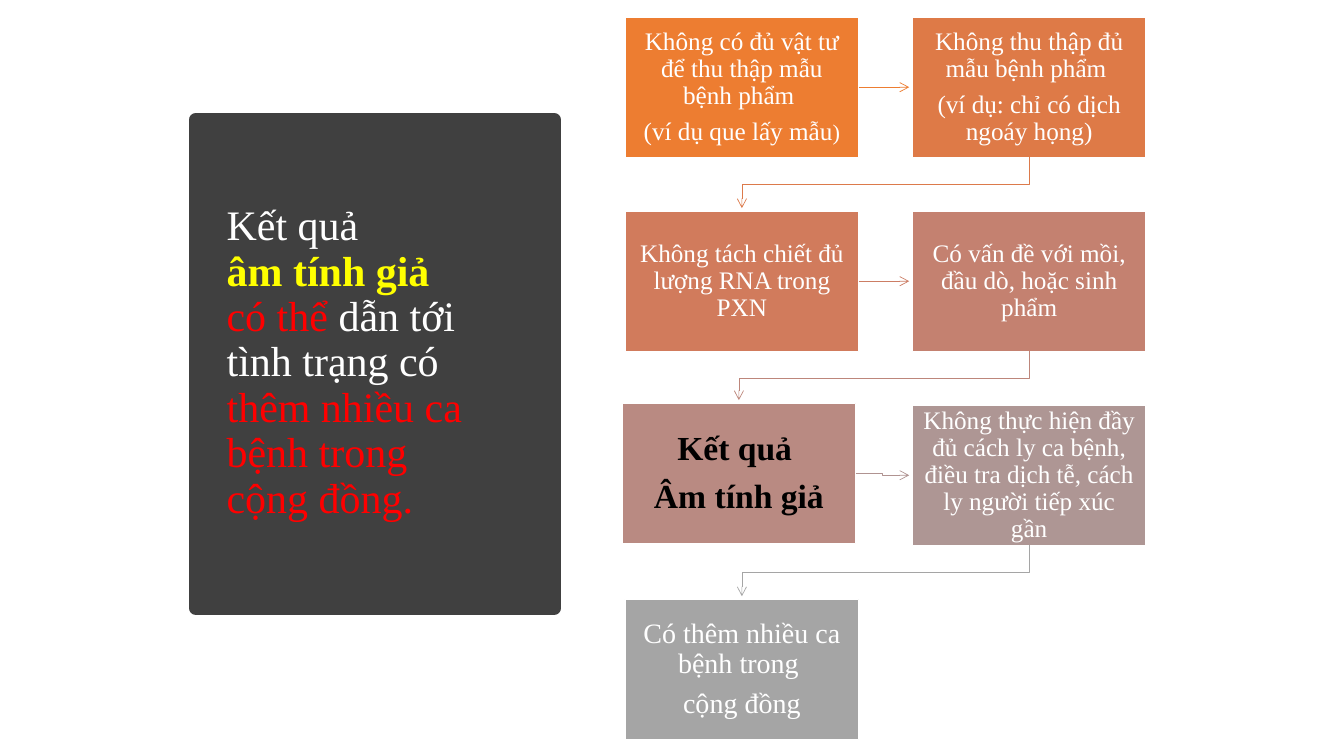
from dataclasses import dataclass
from itertools import pairwise

from lxml import etree
from pptx import Presentation
from pptx import util as u
from pptx.dml.color import RGBColor
from pptx.enum import shapes, text
from pptx.oxml.ns import qn


@dataclass(frozen=True)
class Theme:
    font: str = "Times New Roman"
    panel: str = "404040"
    white: str = "FFFFFF"
    black: str = "000000"
    yellow: str = "FFFF00"
    red: str = "FF0000"
    steps: tuple = ("ED7D31", "DE7A47", "D17B5C", "C48170", "B98A82", "AE9694", "A5A5A5")
    arrows: tuple = ("ED7D31", "DC7A4B", "CC7D64", "BD867B", "B09391", "A5A5A5")
    title: int = 30
    body: int = 18
    small: int = 16
    result: int = 24
    ending: int = 20


theme = Theme()


def add_block(left, top, width, height, fill, outline, weight):
    block = slide.shapes.add_shape(
        shapes.MSO_SHAPE.RECTANGLE, *map(u.Inches, (left, top, width, height)))
    block.shadow.inherit = False
    block.fill.solid()
    block.fill.fore_color.rgb = RGBColor.from_string(fill)
    block.line.color.rgb = RGBColor.from_string(outline)
    block.line.width = u.Pt(weight)
    return block


def add_styled_run(paragraph, words, size, colour, bold=False):
    run = paragraph.add_run()
    run.text = words
    run.font.name = theme.font
    run.font.size = u.Pt(size)
    run.font.bold = bold
    run.font.color.rgb = RGBColor.from_string(colour)


presentation = Presentation()
presentation.slide_width = u.Inches(13.333)
presentation.slide_height = u.Inches(7.5)
slide = presentation.slides.add_slide(presentation.slide_layouts[6])

# Message panel on the left
add_block(1.94, 1.19, 3.56, 4.84, theme.panel, theme.panel, 10)
message = slide.shapes.add_textbox(*map(u.Inches, (2.15, 1.46, 2.85, 4.29))).text_frame
message.word_wrap = True
message.vertical_anchor = text.MSO_ANCHOR.MIDDLE
paragraph = message.paragraphs[0]
paragraph.line_spacing = 0.9
message_lines = [
    [("Kết quả ", theme.white, False)],
    [("âm tính giả ", theme.yellow, True)],
    [("có thể ", theme.red, False),
     ("dẫn tới tình trạng có ", theme.white, False),
     ("thêm nhiều ca bệnh trong cộng đồng.", theme.red, False)],
]
for index, line in enumerate(message_lines):
    if index:
        paragraph.add_line_break()
    for words, colour, bold in line:
        add_styled_run(paragraph, words, theme.title, colour, bold)

# Chain of steps: two columns, read row by row
BOX_WIDTH, BOX_HEIGHT = 2.32, 1.39
GRID_LEFT, GRID_TOP = 6.2, 0.17
COLUMN_PITCH, ROW_PITCH = 2.85, 1.925
ARROW_GAP, ELBOW_DROP = 0.03, 0.27
RESULT_STEP = 4

steps = [
    (["Không có đủ vật tư để thu thập mẫu bệnh phẩm ", "(ví dụ que lấy mẫu)"], theme.body),
    (["Không thu thập đủ mẫu bệnh phẩm ", "(ví dụ: chỉ có dịch ngoáy họng)"], theme.body),
    (["Không tách chiết đủ lượng RNA trong PXN"], theme.body),
    (["Có vấn đề với mồi, đầu dò, hoặc sinh phẩm"], theme.body),
    (["Kết quả ", "Âm tính giả"], theme.result),
    (["Không thực hiện đầy đủ cách ly ca bệnh, điều tra dịch tễ, "
      "cách ly người tiếp xúc gần"], theme.body),
    (["Có thêm nhiều ca bệnh trong ", "cộng đồng"], theme.ending),
]

corners = []
for index, ((paragraphs, size), fill) in enumerate(zip(steps, theme.steps)):
    row, column = divmod(index, 2)
    is_result = index == RESULT_STEP
    left = GRID_LEFT + column * COLUMN_PITCH - 0.03 * is_result
    top = GRID_TOP + row * ROW_PITCH - 0.02 * is_result
    corners.append((left, top))
    frame = add_block(left, top, BOX_WIDTH, BOX_HEIGHT, fill, theme.white, 1).text_frame
    frame.word_wrap = True
    frame.vertical_anchor = text.MSO_ANCHOR.MIDDLE
    frame.margin_left = frame.margin_right = u.Inches(0.11)
    frame.margin_top = frame.margin_bottom = u.Inches(0.12)
    for number, words in enumerate(paragraphs):
        paragraph = frame.add_paragraph() if number else frame.paragraphs[0]
        paragraph.alignment = text.PP_ALIGN.CENTER
        paragraph.line_spacing = 0.9
        paragraph.space_after = u.Pt(0.35 * size)
        colour = theme.black if is_result else theme.white
        add_styled_run(paragraph, words, size, colour, is_result)

# The first step closes its bracket in a smaller size
example = slide.shapes[1 + 1].text_frame.paragraphs[1]
example.runs[0].text = example.runs[0].text.removesuffix(")")
add_styled_run(example, ")", theme.small, theme.white)

# Arrows: straight across a row, stepped down to the next one
for index, ((left, top), (next_left, next_top)) in enumerate(pairwise(corners)):
    if index % 2 == 0:
        start = (left + BOX_WIDTH, top + BOX_HEIGHT / 2)
        end = (next_left - ARROW_GAP, next_top + BOX_HEIGHT / 2)
        middle = (start[0] + end[0]) / 2
        bends = [(middle, start[1]), (middle, end[1])]
    else:
        start = (left + BOX_WIDTH / 2, top + BOX_HEIGHT)
        end = (next_left + BOX_WIDTH / 2, next_top - ARROW_GAP)
        middle = start[1] + ELBOW_DROP
        bends = [(start[0], middle), (end[0], middle)]
    points = [tuple(map(u.Inches, point)) for point in (start, *bends, end)]
    if start[1] == end[1]:
        arrow = slide.shapes.add_connector(
            shapes.MSO_CONNECTOR.STRAIGHT, *points[0], *points[-1])
    else:
        builder = slide.shapes.build_freeform(*points[0])
        builder.add_line_segments(points[1:], close=False)
        arrow = builder.convert_to_shape()
        arrow.fill.background()
    arrow.line.color.rgb = RGBColor.from_string(theme.arrows[index])
    arrow.line.width = u.Pt(0.5)
    etree.SubElement(arrow.get_or_add_ln(), qn("a:tailEnd"), type="arrow")
    etree.SubElement(arrow._element.spPr, qn("a:effectLst"))

presentation.save("out.pptx")
